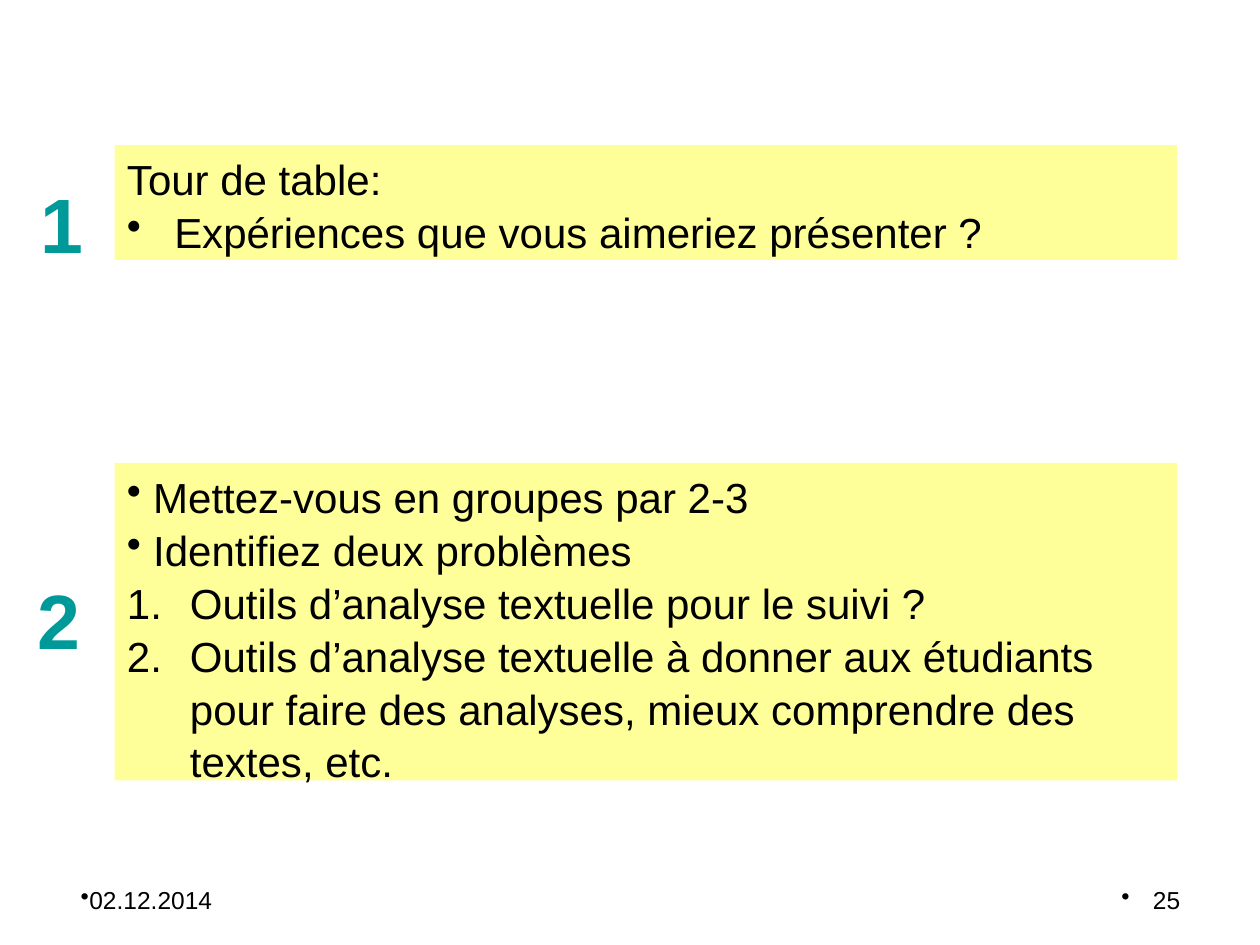
from pptx import Presentation
from pptx.dml.color import RGBColor as Color
from pptx.enum.shapes import MSO_SHAPE as Shape
from pptx.enum.text import MSO_ANCHOR as Anchor, MSO_AUTO_SIZE as AutoSize, PP_ALIGN as Align
from pptx.oxml.xmlchemy import OxmlElement
from pptx.util import Pt

THEME = {
    "font": "Arial",
    "ink": Color(0, 0, 0),
    "teal": Color(0x00, 0x99, 0x99),
    "yellow": Color(0xFF, 0xFF, 0x99),
    "white": Color(0xFF, 0xFF, 0xFF),
    "footer": 14,
    "body": 24,
    "number": 44,
}


def write(box, lines, size, color=THEME["ink"], bold=False, align=Align.LEFT,
          spacing=1.05, wrap=True):
    """Fill a box with lines of (text, marker, hanging indent in points)."""
    frame = box.text_frame
    frame.word_wrap = wrap
    frame.auto_size = AutoSize.NONE
    frame.vertical_anchor = Anchor.TOP
    for index, (text, marker, indent) in enumerate(lines):
        para = frame.add_paragraph() if index else frame.paragraphs[0]
        para.alignment = align
        para.line_spacing = spacing
        span = para.add_run()
        span.text = text
        span.font.name = THEME["font"]
        span.font.size = Pt(size)
        span.font.bold = bold
        span.font.color.rgb = color
        if marker:
            props = para._p.get_or_add_pPr()
            props.set("marL", str(Pt(indent)))
            props.set("indent", str(-Pt(indent)))
            if marker == "1.":
                bullet = OxmlElement("a:buAutoNum")
                bullet.set("type", "arabicPeriod")
            else:
                bullet = OxmlElement("a:buChar")
                bullet.set("char", marker)
            props.append(bullet)


def add_panel(page, left, top, width, height, fill):
    panel = page.shapes.add_shape(Shape.RECTANGLE, Pt(left), Pt(top), Pt(width), Pt(height))
    panel.shadow.inherit = False
    panel.fill.solid()
    panel.fill.fore_color.rgb = fill
    panel.line.fill.background()
    return panel


deck = Presentation()
deck.slide_width, deck.slide_height = Pt(720), Pt(540)
page = deck.slides.add_slide(deck.slide_layouts[6])

# Date and page number
for left, text, indent, align in [
    (39, "02.12.2014", 0, Align.LEFT),
    (513.5, "25", 18, Align.RIGHT),
]:
    box = page.shapes.add_textbox(Pt(left), Pt(503.5), Pt(168), Pt(25))
    write(box, [(text, "•", indent)], THEME["footer"], align=align, spacing=0.93)

# Yellow task panels
group_work = [
    ("Mettez-vous en groupes par 2-3", "•", 15),
    ("Identifiez deux problèmes", "•", 15),
    ("Outils d’analyse textuelle pour le suivi ?", "1.", 36),
    ("Outils d’analyse textuelle à donner aux étudiants pour faire des analyses, "
     "mieux comprendre des textes, etc.", "1.", 36),
]
round_table = [
    ("Tour de table:", None, 0),
    ("Expériences que vous aimeriez présenter ?", "•", 27),
]
for top, height, lines in [(264.5, 181.5, group_work), (83, 65.5, round_table)]:
    panel = add_panel(page, 65.5, top, 607, height, THEME["yellow"])
    write(panel, lines, THEME["body"])

# Task numbers
for left, top, width, digit in [(16, 94.5, 37.5, "1"), (14.5, 321, 39.5, "2")]:
    badge = add_panel(page, left, top, width, 60.5, THEME["white"])
    write(badge, [(digit, None, 0)], THEME["number"], color=THEME["teal"], bold=True, wrap=False)

deck.save("out.pptx")
